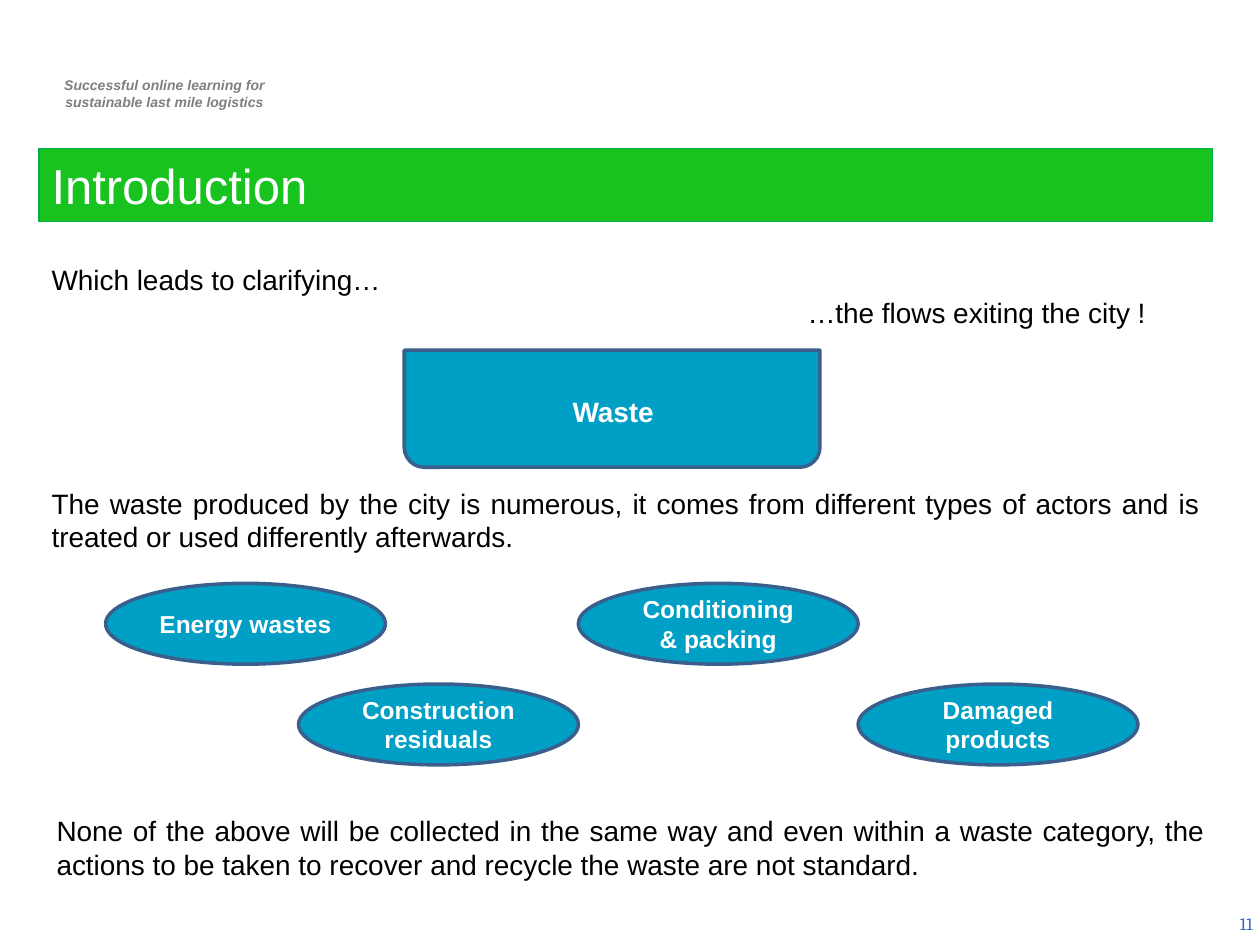
from dataclasses import dataclass

from pptx import Presentation
from pptx.dml.color import RGBColor as RGB
from pptx.enum.shapes import MSO_SHAPE as SHAPE
from pptx.enum.text import MSO_ANCHOR as ANCHOR, PP_ALIGN as ALIGN
from pptx.util import Cm, Pt


@dataclass(frozen=True)
class Theme:
    font: str = "Arial"
    number_font: str = "Cambria"
    black: str = "000000"
    white: str = "FFFFFF"
    grey: str = "7F7F7F"
    number: str = "3366CC"
    green: str = "18C320"
    green_line: str = "00B050"
    blue: str = "009FC6"
    blue_line: str = "3A5F8C"
    title_size: float = 28
    body_size: float = 16
    label_size: float = 14
    number_size: float = 10
    tagline_size: float = 8


class SlideBuilder:
    def __init__(self, slide, theme):
        self.slide = slide
        self.theme = theme

    def fill_text(self, sp, lines, size, color, align, bold=False,
                  italic=False, font=None, anchor=ANCHOR.TOP):
        tf = sp.text_frame
        tf.word_wrap = True
        tf.vertical_anchor = anchor
        tf.text = "\n".join(lines)
        for p in tf.paragraphs:
            p.alignment = align
            p.font.name = font or self.theme.font
            p.font.size = Pt(size)
            p.font.bold = bold
            p.font.italic = italic
            p.font.color.rgb = RGB.from_string(color)
        return tf

    def text(self, box, lines, size, color, align, parent=None, **style):
        shapes = (parent or self.slide).shapes
        sp = shapes.add_textbox(*map(Cm, box))
        return self.fill_text(sp, lines, size, color, align, **style)

    def body(self, left, top, *lines):
        t = self.theme
        return self.text((left, top, 23.65, 1.63), lines, t.body_size,
                         t.black, ALIGN.JUSTIFY)

    def shape(self, kind, box, fill, line, width, parent=None):
        sp = (parent or self.slide).shapes.add_shape(kind, *map(Cm, box))
        sp.shadow.inherit = False
        sp.fill.solid()
        sp.fill.fore_color.rgb = RGB.from_string(fill)
        sp.line.color.rgb = RGB.from_string(line)
        sp.line.width = Pt(width)
        return sp

    def title(self, box, text):
        t = self.theme
        sp = self.shape(SHAPE.RECTANGLE, box, t.green, t.green_line, 0.75)
        tf = self.fill_text(sp, [text], t.title_size, t.white, ALIGN.LEFT,
                            anchor=ANCHOR.BOTTOM)
        tf.paragraphs[0].line_spacing = 0.9

    def bin(self, box, label_box, label):
        t = self.theme
        group = self.slide.shapes.add_group_shape()
        sp = self.shape(SHAPE.ROUND_2_SAME_RECTANGLE, box, t.blue,
                        t.blue_line, 2, group)
        sp.adjustments[0], sp.adjustments[1] = 0, 0.17
        self.text(label_box, [label], t.body_size, t.white, ALIGN.CENTER,
                  group, bold=True)

    def ellipse(self, left, top, label):
        t = self.theme
        sp = self.shape(SHAPE.OVAL, (left, top, 5.64, 1.63), t.blue,
                        t.blue_line, 2)
        self.fill_text(sp, [label], t.label_size, t.white, ALIGN.CENTER,
                       bold=True, anchor=ANCHOR.MIDDLE)


def main():
    prs = Presentation()
    prs.slide_width, prs.slide_height = Cm(25.4), Cm(19.05)
    t = Theme()
    s = SlideBuilder(prs.slides.add_slide(prs.slide_layouts[6]), t)

    s.text((0.74, 1.42, 5.16, 0.94),
           ["Successful online learning for", "sustainable last mile logistics"],
           t.tagline_size, t.grey, ALIGN.CENTER, bold=True, italic=True)
    s.text((19.58, 18.11, 5.92, 1.02), ["11"], t.number_size, t.number,
           ALIGN.RIGHT, font=t.number_font, anchor=ANCHOR.MIDDLE)

    tf = s.body(0.79, 5.16, "Which leads to clarifying…",
                "…the flows exiting the city !")
    tf.paragraphs[1]._p.get_or_add_pPr().set("marL", str(Cm(15.24)))
    s.body(0.79, 9.68, "The waste produced by the city is numerous, it comes "
           "from different types of actors and is treated or used differently "
           "afterwards.")
    s.bin((8.15, 7.06, 8.38, 2.36), (9.35, 7.82, 6.02, 0.94), "Waste")

    upper, lower = 11.76, 13.79
    for left, top, label in (
        (2.13, upper, "Energy wastes"),
        (6.02, lower, "Construction residuals"),
        (11.66, upper, "Conditioning & packing"),
        (17.3, lower, "Damaged products"),
    ):
        s.ellipse(left, top, label)

    s.body(0.89, 16.28, "None of the above will be collected in the same way "
           "and even within a waste category, the actions to be taken to "
           "recover and recycle the waste are not standard.")
    s.title((0.79, 3, 23.65, 1.47), "Introduction")

    prs.save("out.pptx")


if __name__ == "__main__":
    main()
